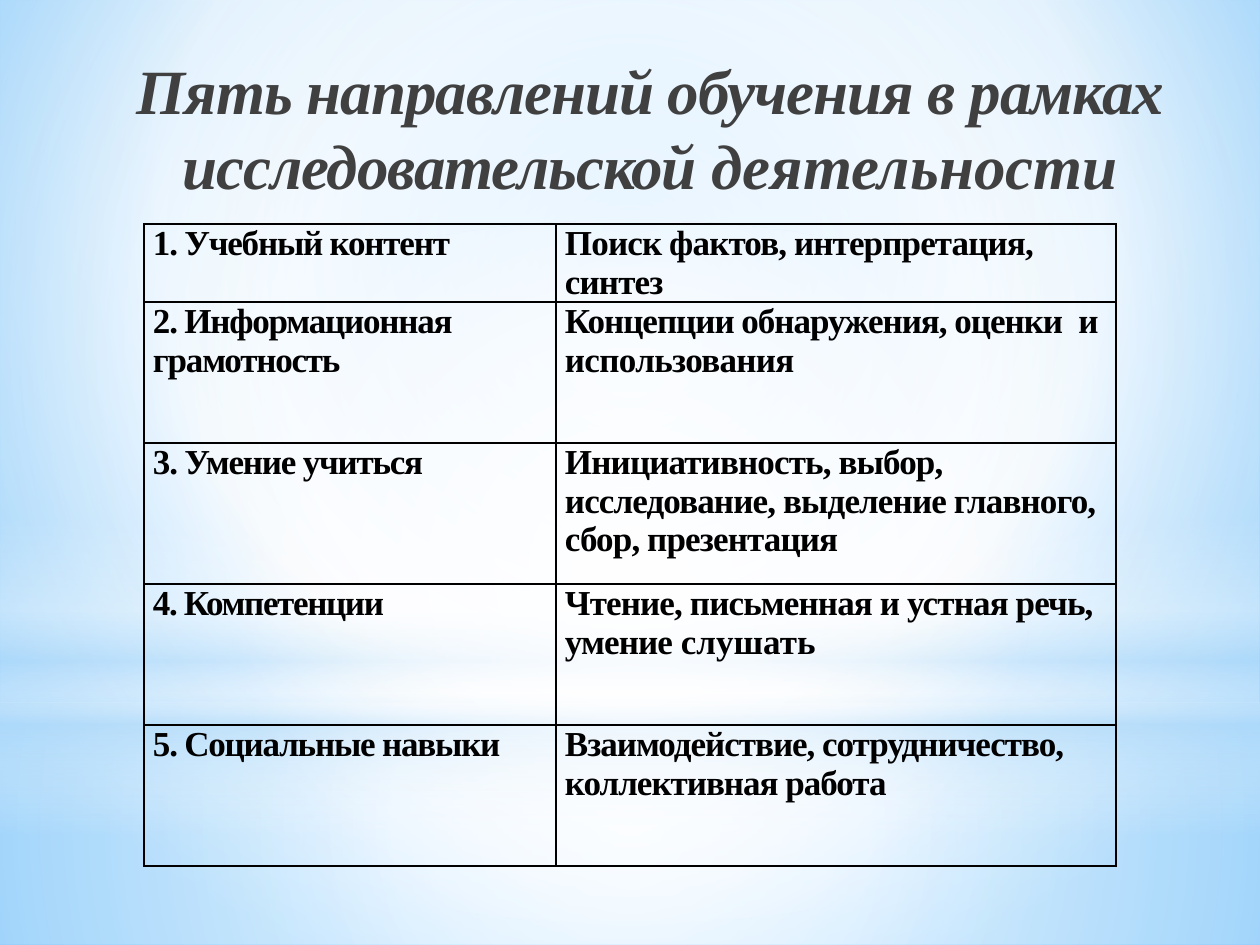
from lxml import etree
from pptx import Presentation
from pptx.dml.color import RGBColor
from pptx.enum.shapes import MSO_SHAPE
from pptx.enum.text import MSO_ANCHOR, MSO_AUTO_SIZE, PP_ALIGN
from pptx.oxml import parse_xml
from pptx.oxml.ns import qn
from pptx.util import Pt

RECT, OVAL = MSO_SHAPE.RECTANGLE, MSO_SHAPE.OVAL
TOP, CENTER = MSO_ANCHOR.TOP, PP_ALIGN.CENTER
NO_AUTOFIT = MSO_AUTO_SIZE.NONE
NS = "http://schemas.openxmlformats.org/drawingml/2006/main"
PNS = "http://schemas.openxmlformats.org/presentationml/2006/main"
FONT = "Times New Roman"
COLORS = {"white": "FFFFFF", "mist": "B4DCFA", "sky": "9ED5FF",
          "azure": "5BB9FF", "title": "404040", "ink": "000000"}
MIDDLE = (50, 50, 50, 50)

TITLE = [("Пять направлений обучения в рамках исследовательской ", -60),
         ("деятельности", 0)]
DIRECTIONS = [
    ([("1. Учебный контент", -70)],
     [("Поиск фактов, интерпретация, синтез", -50)]),
    ([("2. Информационная грамотность", -70)],
     [("Концепции обнаружения, оценки  ", -60), ("и использования", -40)]),
    ([("3. Умение учиться", -70)],
     [("Инициативность, выбор, исследование, выделение главного, "
       "сбор, презентация", -50)]),
    ([("4. Компетенции", -80)],
     [("Чтение, письменная и устная речь, умение ", -50), ("слушать", 0)]),
    ([("5. Социальные навыки", -70)],
     [("Взаимодействие, сотрудничество, коллективная работа", -60)]),
]


def px(length):
    """Turn slide pixels into EMU."""
    return round(length * 914400 / 126)


def gradient(stops, focus=None):
    """Return a gradient fill: circular around focus, or vertical without it."""
    marks = "".join(
        f'<a:gs pos="{pos * 1000}"><a:srgbClr val="{COLORS[color]}">'
        f'<a:alpha val="{alpha * 1000}"/></a:srgbClr></a:gs>'
        for pos, color, alpha in stops)
    if focus:
        left, top, right, bottom = (edge * 1000 for edge in focus)
        course = (f'<a:path path="circle"><a:fillToRect l="{left}" t="{top}" '
                  f'r="{right}" b="{bottom}"/></a:path>')
    else:
        course = '<a:lin ang="5400000" scaled="0"/>'
    return parse_xml(f'<a:gradFill xmlns:a="{NS}" rotWithShape="1">'
                     f'<a:gsLst>{marks}</a:gsLst>{course}</a:gradFill>')


def add_glow(slide, kind, box, stops, focus=None):
    """Add one borderless gradient shape in the box."""
    glow = slide.shapes.add_shape(kind, *map(px, box))
    glow.shadow.inherit = False
    glow.line.fill.background()
    glow.fill.background()
    properties = glow._element.spPr
    properties.replace(properties.find(qn("a:noFill")), gradient(stops, focus))


def add_backdrop(slide, box):
    """Paint the sky background and its layers of light."""
    left, top, width, height = box
    horizon = 703
    background = parse_xml(f'<p:bg xmlns:p="{PNS}"><p:bgPr/></p:bg>')
    background[0].append(gradient(
        [(0, "sky", 100), (60, "white", 100), (100, "azure", 100)],
        (20, 10, 20, 60)))
    etree.SubElement(background[0], qn("a:effectLst"))
    slide._element.cSld.insert(0, background)
    add_glow(slide, RECT, (left, top + horizon, width, height - horizon),
             [(0, "white", 91), (37, "white", 76), (100, "mist", 79)], MIDDLE)
    add_glow(slide, RECT, (left, top, width, horizon),
             [(0, "white", 89), (48, "white", 62), (100, "mist", 79)], MIDDLE)
    add_glow(slide, RECT, (left, top + 519, width, 315),
             [(0, "white", 0), (29, "white", 30), (45, "mist", 40),
              (55, "white", 26), (65, "mist", 60), (100, "white", 0)])
    add_glow(slide, OVAL, (left, top + 221, width, horizon),
             [(0, "white", 100), (56, "white", 0)], MIDDLE)


def write(paragraph, pieces, size, color):
    """Fill a paragraph with bold text whose runs differ in letter spacing."""
    font = paragraph.font
    font.name, font.size, font.bold = FONT, Pt(size), True
    font.color.rgb = RGBColor.from_string(COLORS[color])
    for text, spacing in pieces:
        run = paragraph.add_run()
        run.text = text
        run.font._element.set("spc", str(spacing))


def add_title(slide, box):
    """Place the centred italic title in front of the backdrop."""
    title = slide.shapes.title
    title.left, title.top, title.width, title.height = map(px, box)
    slide.shapes._spTree.append(title._element)
    frame = title.text_frame
    frame.word_wrap, frame.auto_size = True, NO_AUTOFIT
    frame.vertical_anchor = TOP
    heading = frame.paragraphs[0]
    heading.alignment, heading.space_before = CENTER, Pt(7)
    write(heading, TITLE, 36, "title")
    heading.font.italic = True


def outline(cell):
    """Draw a thin dark border on every side of a cell."""
    properties = cell._tc.get_or_add_tcPr()
    for place, side in enumerate(("lnL", "lnR", "lnT", "lnB")):
        properties.insert(place, parse_xml(
            f'<a:{side} xmlns:a="{NS}" w="12700"><a:solidFill>'
            f'<a:srgbClr val="{COLORS["ink"]}"/></a:solidFill></a:{side}>'))


def add_directions(slide, box):
    """Add the table of directions and the skills they cover."""
    left, top, width, height = box
    first_column, first_row = 412, 78
    table = slide.shapes.add_table(
        len(DIRECTIONS), 2, *map(px, box)).table
    table.first_row = table.horz_banding = False
    table.columns[0].width = px(first_column)
    table.columns[1].width = px(width - first_column)
    other_row = (height - first_row) / (len(DIRECTIONS) - 1)
    for index, (row, direction) in enumerate(zip(table.rows, DIRECTIONS)):
        row.height = px(other_row if index else first_row)
        for cell, pieces in zip(row.cells, direction):
            cell.fill.background()
            cell.margin_left = cell.margin_right = px(9)
            cell.margin_top = cell.margin_bottom = 0
            outline(cell)
            write(cell.text_frame.paragraphs[0], pieces, 20, "ink")


def main():
    """Build and save the slide."""
    deck = Presentation()
    deck.slide_width, deck.slide_height = px(1260), px(945)
    slide = deck.slides.add_slide(deck.slide_layouts[5])
    add_backdrop(slide, (0, 0, 1260, 945))
    add_title(slide, (84, 45, 1132, 159))
    add_directions(slide, (144, 224, 972, 642))
    deck.save("out.pptx")


if __name__ == "__main__":
    main()
